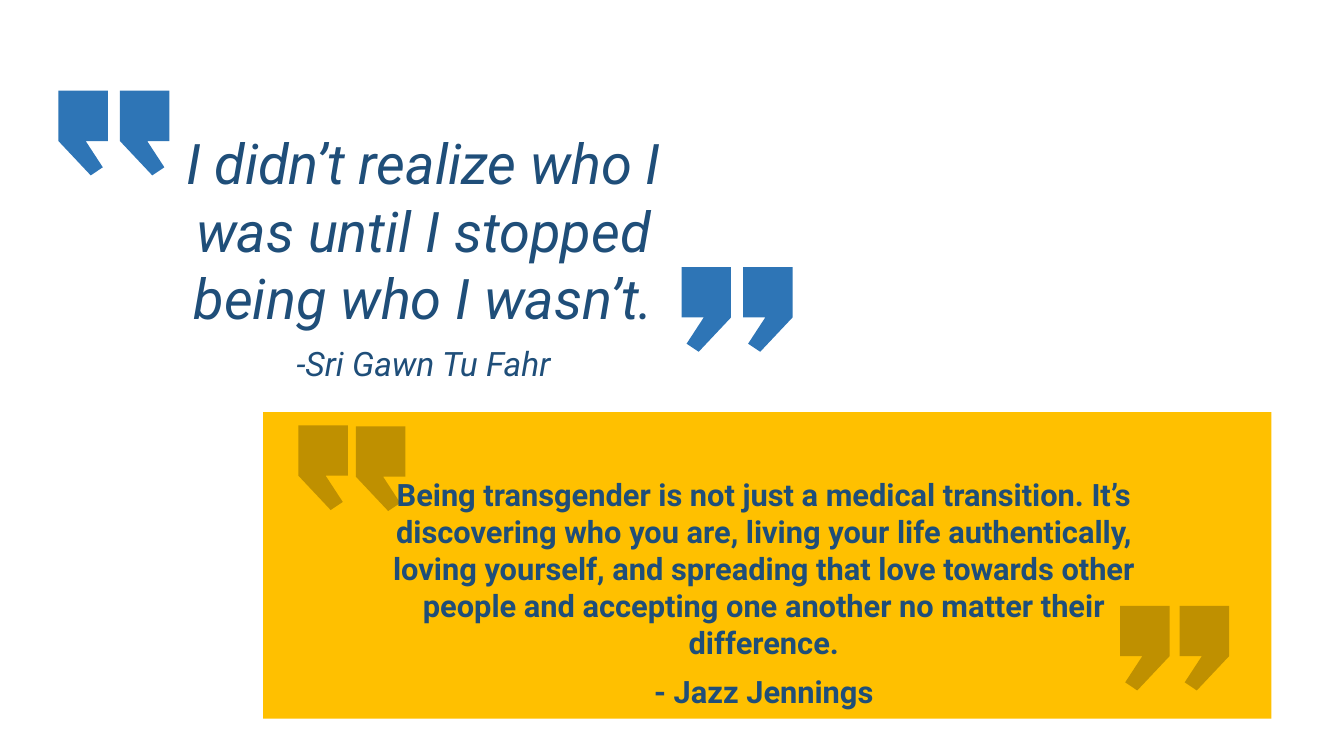
from dataclasses import dataclass

from pptx import Presentation
from pptx.dml.color import RGBColor
from pptx.enum import shapes, text
from pptx.util import Inches, Pt


@dataclass(frozen=True)
class Theme:
    font: str = "Roboto"
    ink: RGBColor = RGBColor(0x1F, 0x4E, 0x79)
    blue: RGBColor = RGBColor(0x2E, 0x75, 0xB6)
    gold: RGBColor = RGBColor(0xFF, 0xC0, 0x00)
    dark_gold: RGBColor = RGBColor(0xBF, 0x90, 0x00)
    large: int = 40
    medium: int = 24
    small: int = 22
    gap: int = 9


THEME = Theme()

# Outline of one opening mark, in hundredths of an inch
MARK_WIDTH = 49
MARK = [(0, 0), (49, 0), (49, 50), (27, 50), (44, 76), (32, 84), (0, 50)]


def paint(shape, color):
    shape.shadow.inherit = False
    shape.fill.solid()
    shape.fill.fore_color.rgb = color
    shape.line.fill.background()


def add_mark(parent, left, top, color, closing=False):
    """Draw one quotation mark; a closing one is mirrored."""
    outline = [(MARK_WIDTH - x if closing else x, y) for x, y in MARK]
    builder = parent.build_freeform(*outline[0], scale=Inches(0.01))
    builder.add_line_segments(outline[1:], close=True)
    paint(builder.convert_to_shape(Inches(left), Inches(top)), color)


def add_quote(parent, left, top, width, height, lines, bold=False, italic=False):
    """Add a centred quotation from (wording, size) pairs."""
    quote = parent.add_textbox(Inches(left), Inches(top), Inches(width), Inches(height))
    frame = quote.text_frame
    frame.word_wrap = True
    frame.vertical_anchor = text.MSO_ANCHOR.TOP
    for index, (wording, size) in enumerate(lines):
        paragraph = frame.paragraphs[0] if index == 0 else frame.add_paragraph()
        paragraph.alignment = text.PP_ALIGN.CENTER
        if index:
            paragraph.space_before = Pt(THEME.gap)
        run = paragraph.add_run()
        run.text = wording
        run.font.name = THEME.font
        run.font.size = Pt(size)
        run.font.bold = bold
        run.font.italic = italic
        run.font.color.rgb = THEME.ink


def add_panel(parent, left, top, width, height):
    panel = parent.add_shape(
        shapes.MSO_SHAPE.RECTANGLE,
        Inches(left), Inches(top), Inches(width), Inches(height),
    )
    paint(panel, THEME.gold)


def main():
    deck = Presentation()
    deck.slide_width, deck.slide_height = Inches(13.33), Inches(7.5)
    slide = deck.slides.add_slide(deck.slide_layouts[6])

    # Upper quotation
    add_quote(
        slide.shapes, 1.44, 1.23, 5.52, 2.59,
        [("I didn’t realize who I was until I stopped being who I wasn’t.", THEME.large),
         ("-Sri Gawn Tu Fahr", THEME.medium)],
        italic=True,
    )
    for left, top, closing in [(0.58, 0.9, False), (6.76, 2.65, True)]:
        pair = slide.shapes.add_group_shape().shapes
        for offset in (0, 0.61):
            add_mark(pair, left + offset, top, THEME.blue, closing)

    # Lower quotation on its gold panel
    card = slide.shapes.add_group_shape().shapes
    add_panel(card, 2.61, 4.09, 10, 3.04)
    for left, top, closing in [(2.96, 4.22, False), (3.53, 4.23, False),
                               (11.11, 6.01, True), (11.7, 6.01, True)]:
        add_mark(card, left, top, THEME.dark_gold, closing)
    add_quote(
        card, 3.39, 4.67, 8.37, 2.15,
        [("Being transgender is not just a medical transition. It’s discovering "
          "who you are, living your life authentically, loving yourself, and "
          "spreading that love towards other people and accepting one another "
          "no matter their difference.", THEME.small),
         ("- Jazz Jennings", THEME.small)],
        bold=True,
    )

    deck.save("out.pptx")


if __name__ == "__main__":
    main()
